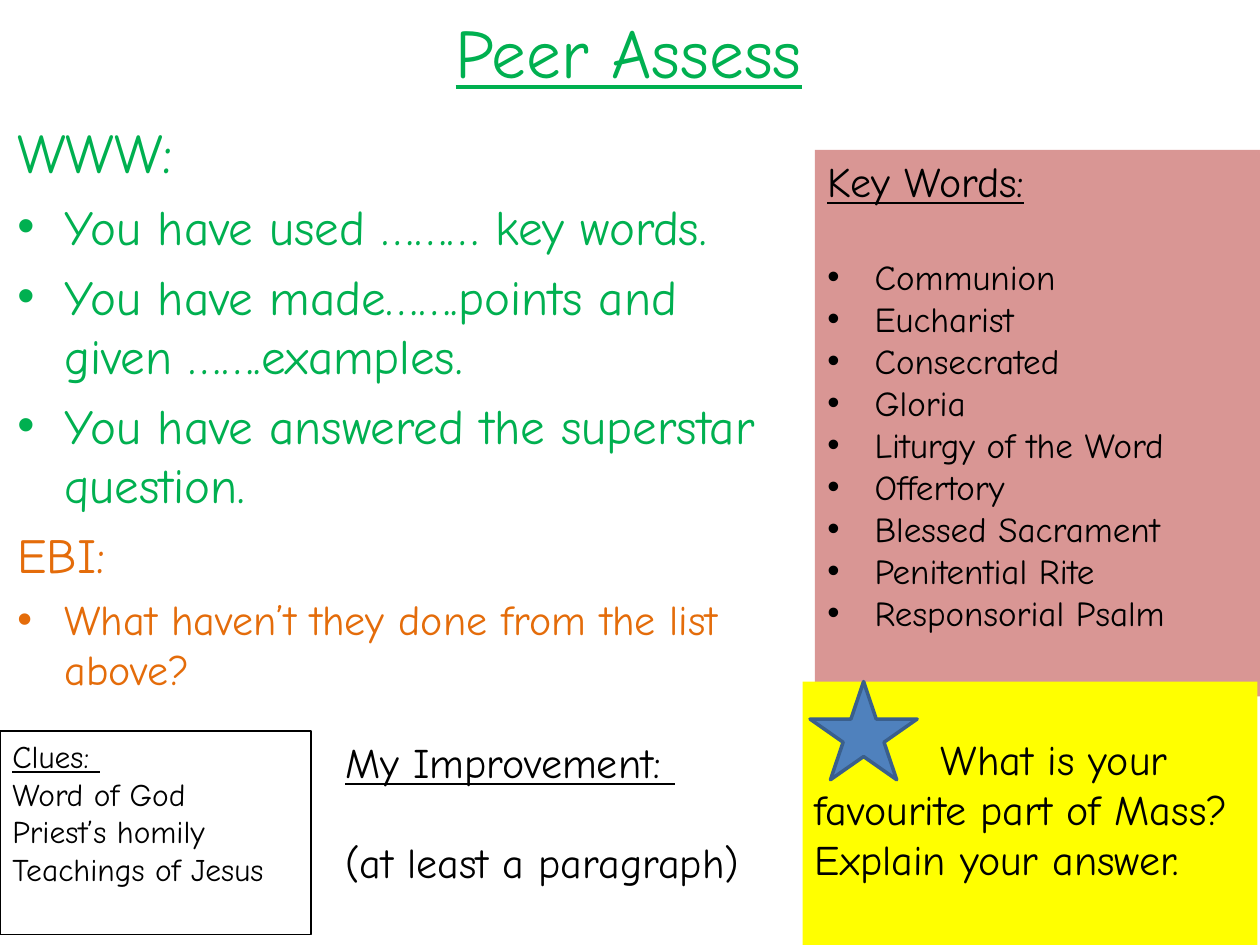
from dataclasses import dataclass

from lxml import etree
from pptx import Presentation
from pptx import util as u
from pptx.dml.color import RGBColor
from pptx.enum import shapes, text
from pptx.oxml import ns


@dataclass(frozen=True)
class Theme:
    font: str = "Comic Neue"
    green: str = "00B050"
    orange: str = "E46C0A"
    black: str = "000000"
    pink: str = "D99694"
    yellow: str = "FFFF00"
    star: str = "4F81BD"
    star_edge: str = "3A5F8C"
    title: float = 39.6
    www: int = 32
    praise: int = 28
    heading: int = 24
    key_word: int = 20
    clue: int = 18


THEME = Theme()
LINE_HEIGHT = 1.17  # line pitch relative to type size
BULLET_INDENT = u.Cm(0.95)

PRAISE = [
    "You have used ……… key words.",
    "You have made…….points and given …….examples.",
    "You have answered the superstar question.",
]
TARGET = "What haven’t they done from the list above?"
KEY_WORDS = [
    "Communion", "Eucharist", "Consecrated", "Gloria", "Liturgy of the Word",
    "Offertory", "Blessed Sacrament", "Penitential Rite", "Responsorial Psalm",
]
CLUES = ["Word of God", "Priest’s homily", "Teachings of Jesus"]
QUESTION = "What is your favourite part of Mass? Explain your answer."

# left, top, width, height in centimetres
PLACES = {
    "title": (0, 0.69, 25.35, 2.34),
    "feedback": (0.1, 2.24, 16.23, 12.57),
    "key words": (16.43, 3.02, 8.97, 11.02),
    "question": (16.18, 13.74, 9.17, 5.31),
    "star": (16.33, 13.74, 2.16, 1.98),
    "clues": (0, 14.73, 6.27, 4.11),
    "improvement": (6.71, 14.73, 9.12, 3.33),
}


def place(part):
    return [u.Cm(length) for length in PLACES[part]]


def add_text_area(slide, part):
    frame = slide.shapes.add_textbox(*place(part)).text_frame
    frame.word_wrap = True
    return frame


def add_panel(slide, part, fill=None, edge=None, edge_width=1,
              kind=shapes.MSO_SHAPE.RECTANGLE):
    panel = slide.shapes.add_shape(kind, *place(part))
    panel.shadow.inherit = False
    if fill:
        panel.fill.solid()
        panel.fill.fore_color.rgb = RGBColor.from_string(fill)
    else:
        panel.fill.background()
    if edge:
        panel.line.color.rgb = RGBColor.from_string(edge)
        panel.line.width = u.Pt(edge_width)
    else:
        panel.line.fill.background()
    frame = panel.text_frame
    frame.word_wrap = True
    frame.vertical_anchor = text.MSO_ANCHOR.TOP
    return frame


def write(frame, words, size, color=THEME.black, underline=False,
          bullet=False, before=0, align=text.PP_ALIGN.LEFT):
    """Add a paragraph; the frame's empty first one is used up first."""
    paragraph = frame.paragraphs[0]
    if paragraph.runs:
        paragraph = frame.add_paragraph()
    paragraph.alignment = align
    paragraph.space_before = u.Pt(before)
    run = paragraph.add_run()
    run.text = words
    run.font.name = THEME.font
    run.font.size = u.Pt(size)
    run.font.underline = underline
    run.font.color.rgb = RGBColor.from_string(color)
    if bullet:
        props = paragraph._p.get_or_add_pPr()
        props.set("marL", str(BULLET_INDENT))
        props.set("indent", str(-BULLET_INDENT))
        etree.SubElement(props, ns.qn("a:buFont"), typeface="Arial")
        etree.SubElement(props, ns.qn("a:buChar"), char="•")
    return paragraph


def add_title(slide):
    frame = add_text_area(slide, "title")
    frame.vertical_anchor = text.MSO_ANCHOR.MIDDLE
    heading = write(frame, "Peer Assess", THEME.title, THEME.green,
                    underline=True, align=text.PP_ALIGN.CENTER)
    heading.font.size = u.Pt(THEME.title)
    heading.add_line_break()


def add_feedback(slide):
    frame = add_text_area(slide, "feedback")
    lines = [("WWW:", THEME.www, THEME.green, False)]
    lines += [(point, THEME.praise, THEME.green, True) for point in PRAISE]
    lines += [("EBI:", THEME.praise, THEME.orange, False),
              (TARGET, THEME.heading, THEME.orange, True)]
    for words, size, color, bullet in lines:
        write(frame, words, size, color, bullet=bullet,
              before=round(0.2 * LINE_HEIGHT * size, 1))


def add_key_words(slide):
    frame = add_panel(slide, "key words", THEME.pink)
    write(frame, "Key Words:", THEME.heading, underline=True)
    for index, word in enumerate(KEY_WORDS):
        write(frame, word, THEME.key_word, bullet=True,
              before=0 if index else THEME.heading * LINE_HEIGHT)


def add_question(slide):
    frame = add_panel(slide, "question", THEME.yellow)
    frame.margin_top = u.Cm(1.04)
    question = write(frame, QUESTION, THEME.heading)
    # the first line starts clear of the star
    question._p.get_or_add_pPr().set("indent", str(u.Cm(2.54)))
    add_panel(slide, "star", THEME.star, THEME.star_edge, 2,
              shapes.MSO_SHAPE.STAR_5_POINT)


def add_clues(slide):
    frame = add_panel(slide, "clues", edge=THEME.black)
    write(frame, "Clues: ", THEME.clue, underline=True)
    for clue in CLUES:
        write(frame, clue, THEME.clue)


def add_improvement(slide):
    frame = add_text_area(slide, "improvement")
    write(frame, "My Improvement: ", THEME.heading, underline=True)
    write(frame, "(at least a paragraph)", THEME.heading,
          before=THEME.heading * LINE_HEIGHT)


def main():
    deck = Presentation()
    deck.slide_width, deck.slide_height = u.Cm(25.4), u.Cm(19.05)
    slide = deck.slides.add_slide(deck.slide_layouts[6])
    for add_part in (add_title, add_feedback, add_key_words, add_question,
                     add_clues, add_improvement):
        add_part(slide)
    deck.save("out.pptx")


if __name__ == "__main__":
    main()
